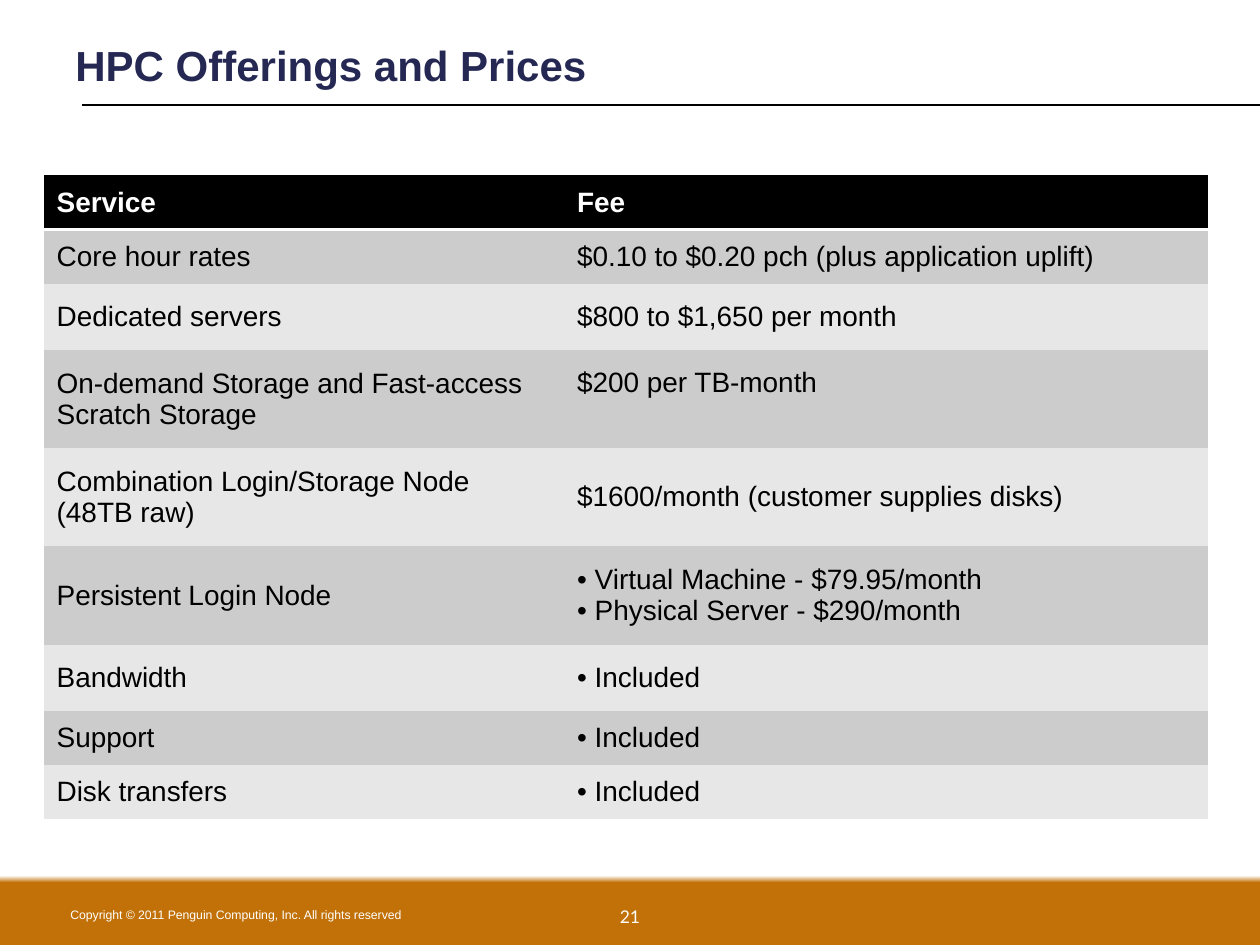
from lxml import etree
from pptx import Presentation, util as u
from pptx.dml.color import RGBColor
from pptx.enum import shapes, text
from pptx.oxml import ns

HUES = {"navy": "242852", "black": "000000", "white": "FFFFFF",
        "orange": "C17107", "dark": "CCCCCC", "light": "E7E7E7"}
COLS, ROWS = 100, 75  # slide grid


def hue(name):
    return RGBColor.from_string(HUES[name])


def sub(parent, tag, **attrs):
    return etree.SubElement(parent, ns.qn(tag), attrs)


def write(frame, lines, size=16, color="black", bold=False, face="Arial",
          align=text.PP_ALIGN.LEFT, bullet=False):
    for i, line in enumerate(lines):
        para = frame.paragraphs[0] if i == 0 else frame.add_paragraph()
        para.text = line
        para.alignment = align
        if bullet:
            props = para._p.get_or_add_pPr()
            hang = u.Inches(0.14)
            props.set("marL", str(hang))
            props.set("indent", str(-hang))
            sub(props, "a:buFont", typeface=face)
            sub(props, "a:buChar", char="•")
        font = para.font
        font.size, font.bold, font.name = u.Pt(size), bold, face
        font.color.rgb = hue(color)


class Deck:
    def __init__(self):
        self.prs = Presentation()
        self.prs.slide_width, self.prs.slide_height = u.Inches(10), u.Inches(7.5)
        self.slide = self.prs.slides.add_slide(self.prs.slide_layouts[6])

    def x(self, cols):
        return round(self.prs.slide_width * cols / COLS)

    def y(self, rows):
        return round(self.prs.slide_height * rows / ROWS)

    def area(self, left, top, wide, high):
        return self.x(left), self.y(top), self.x(wide), self.y(high)

    def band(self, *area):
        bar = self.slide.shapes.add_shape(shapes.MSO_SHAPE.RECTANGLE, *self.area(*area))
        bar.shadow.inherit = False
        bar.line.fill.background()
        bar.fill.gradient()
        bar.fill.gradient_angle = 270
        for stop, name, spot in zip(bar.fill.gradient_stops, ("white", "orange"), (0, 0.1)):
            stop.color.rgb, stop.position = hue(name), spot

    def rule(self, left, right, row):
        line = self.slide.shapes.add_connector(
            shapes.MSO_CONNECTOR.STRAIGHT, self.x(left), self.y(row), self.x(right), self.y(row))
        line.line.color.rgb, line.line.width = hue("black"), u.Pt(0.75)
        sub(line._element.spPr, "a:effectLst")

    def label(self, words, *area, wrap=True, anchor=text.MSO_ANCHOR.TOP, **style):
        frame = self.slide.shapes.add_textbox(*self.area(*area)).text_frame
        frame.word_wrap, frame.vertical_anchor = wrap, anchor
        write(frame, [words], **style)

    def table(self, left, top, wides, highs, data):
        area = self.area(left, top, sum(wides), sum(highs))
        grid = self.slide.shapes.add_table(len(highs), len(wides), *area).table
        grid.horz_banding = False
        # Plain style without grid lines
        style = grid._tbl.tblPr.find(ns.qn("a:tableStyleId"))
        style.text = "{2D5ABB26-0587-4C30-8999-92F81FD0307C}"
        for col, wide in zip(grid.columns, wides):
            col.width = self.x(wide)
        for r, (high, row) in enumerate(zip(highs, data)):
            grid.rows[r].height = self.y(high)
            for c, words in enumerate(row):
                self.cell(grid.cell(r, c), words, r)
        return grid

    def cell(self, cell, words, row):
        head = row == 0
        cell.margin_top = cell.margin_bottom = u.Inches(0.03)
        cell.vertical_anchor = text.MSO_ANCHOR.MIDDLE
        cell.fill.solid()
        cell.fill.fore_color.rgb = hue("black" if head else "dark" if row % 2 else "light")
        listed = isinstance(words, list)
        write(cell.text_frame, words if listed else [words], bullet=listed,
              bold=head, color="white" if head else "black")
        if head:
            edge = etree.Element(ns.qn("a:lnB"), w=str(u.Pt(2)))
            sub(sub(edge, "a:solidFill"), "a:srgbClr", val=HUES["white"])
            cell._tc.tcPr.insert(0, edge)


OFFERS = [
    ("Service", "Fee"),
    ("Core hour rates", "$0.10 to $0.20 pch (plus application uplift)"),
    ("Dedicated servers", "$800 to $1,650 per month"),
    ("On-demand Storage and Fast-access Scratch Storage", "$200 per TB-month"),
    ("Combination Login/Storage Node\v(48TB raw)", "$1600/month (customer supplies disks)"),
    ("Persistent Login Node",
     ["Virtual Machine - $79.95/month", "Physical Server - $290/month"]),
    ("Bandwidth", ["Included"]),
    ("Support", ["Included"]),
    ("Disk transfers", ["Included"]),
]


def main():
    deck = Deck()
    # Footer band and copyright
    deck.band(0, 69.5, 100, 5.5)
    deck.label("Copyright © 2011 Penguin Computing, Inc. All rights reserved",
               4.6, 71.5, 28.8, 2.2, wrap=False, size=7, color="white")
    # Title and rule
    deck.rule(6.5, 100, 8.33)
    deck.label("HPC Offerings and Prices", 5, 2.4, 90.8, 5.4,
               anchor=text.MSO_ANCHOR.MIDDLE, size=24, color="navy", bold=True)
    # Price table
    short, mid, tall = 4.32, 5.22, 7.81
    highs = [short, short, mid, tall, tall, tall, mid, short, short]
    grid = deck.table(3.5, 13.9, [41.3, 51.1], highs, OFFERS)
    # Storage fee lines up with the first line of its service
    fee = grid.cell(3, 1)
    fee.vertical_anchor, fee.margin_top = text.MSO_ANCHOR.TOP, u.Inches(0.14)
    # Page number
    deck.label("21", 47.1, 71.4, 5.8, 3, size=10, color="white", face="Lato",
               align=text.PP_ALIGN.CENTER)
    deck.prs.save("out.pptx")


if __name__ == "__main__":
    main()
